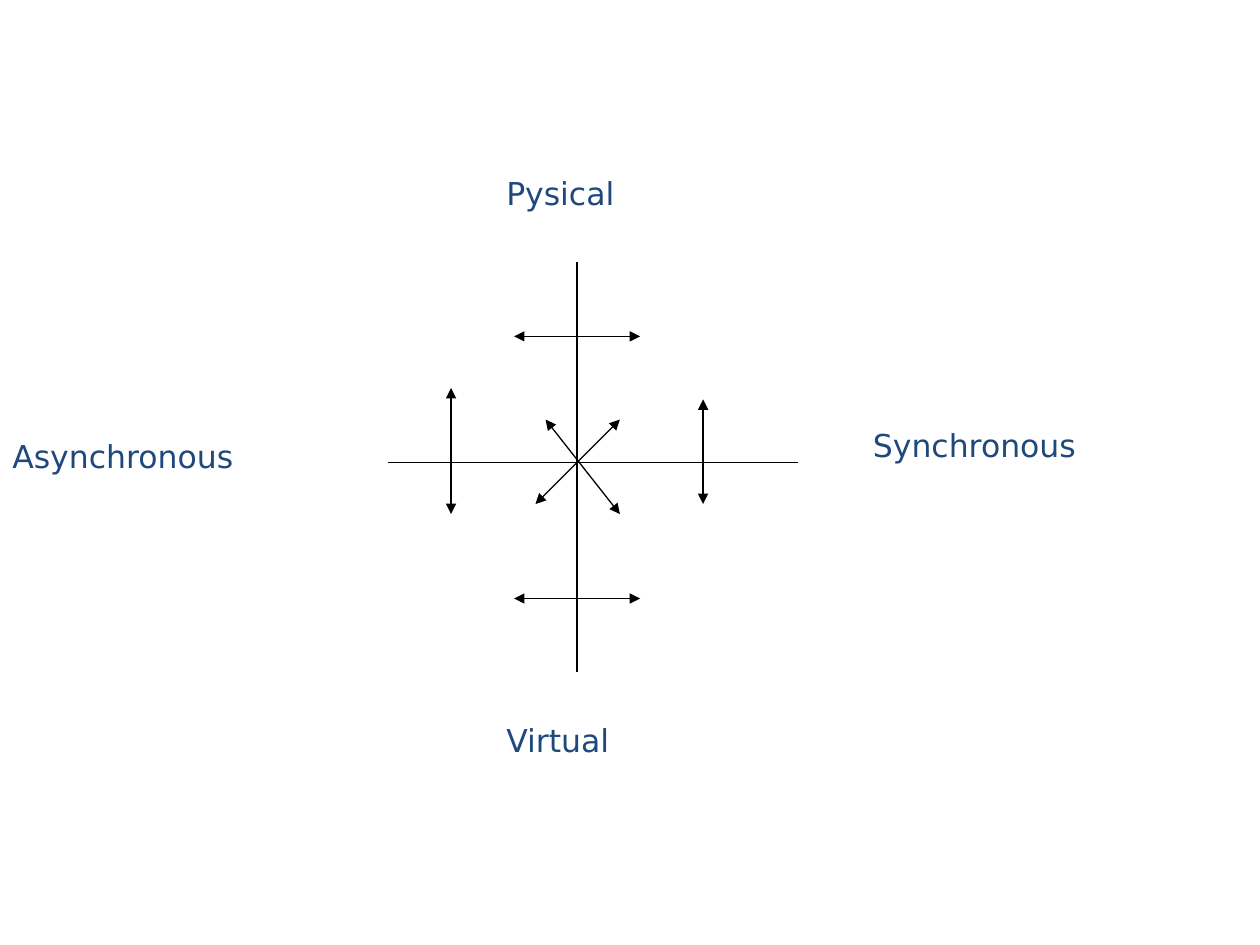
"""Build a slide with two crossing axes, physical-virtual and asynchronous-synchronous."""
import pptx
import pptx.dml.color
import pptx.enum.shapes
import pptx.enum.text
import pptx.oxml
import pptx.oxml.ns
import pptx.util

Inches = pptx.util.Inches
RGB = pptx.dml.color.RGBColor.from_string
THEME = {
    "line": RGB("000000"),
    "line_width": pptx.util.Pt(0.75),
    "text": RGB("1F497D"),
    "font": "DejaVu Sans",
    "size": pptx.util.Pt(18),
}

prs = pptx.Presentation()
prs.slide_width, prs.slide_height = Inches(10), Inches(7.5)
s = prs.slides.add_slide(prs.slide_layouts[6])

axes = [(4.58, 2.08, 4.58, 5.33), (3.08, 3.67, 6.33, 3.67)]
arrows = [
    (5.58, 3.17, 5.58, 4),
    (4.08, 2.67, 5.08, 2.67),
    (3.58, 3.08, 3.58, 4.08),
    (4.08, 4.75, 5.08, 4.75),
    (4.25, 4, 4.92, 3.33),
    (4.33, 3.33, 4.92, 4.08),
]
for ends in axes + arrows:
    sp = s.shapes.add_connector(
        pptx.enum.shapes.MSO_CONNECTOR.STRAIGHT, *[Inches(v) for v in ends]
    )
    sp.line.color.rgb = THEME["line"]
    sp.line.width = THEME["line_width"]
    if ends in arrows:
        ln = sp.line._get_or_add_ln()
        for tag in ("a:headEnd", "a:tailEnd"):
            end = pptx.oxml.ns.qn(tag)
            ln.append(ln.makeelement(end, {"type": "triangle"}))
    effects = pptx.oxml.ns.qn("a:effectLst")
    sp._element.spPr.append(sp._element.makeelement(effects, {}))

labels = [
    ("Pysical", 3.92, 1.33, 1.33),
    ("Asynchronous", 0, 3.42, 2.83),
    ("Synchronous", 6.83, 3.33, 2.37),
    ("Virtual", 3.92, 5.67, 1.3),
]
for text, left, top, width in labels:
    sp = s.shapes.add_textbox(Inches(left), Inches(top), Inches(width), Inches(0.51))
    tf = sp.text_frame
    tf.word_wrap = True
    p = tf.paragraphs[0]
    p.alignment = pptx.enum.text.PP_ALIGN.LEFT
    r = p.add_run()
    r.text = text
    for name, value in {"name": THEME["font"], "size": THEME["size"]}.items():
        setattr(r.font, name, value)
    r.font.color.rgb = THEME["text"]

prs.save("out.pptx")
